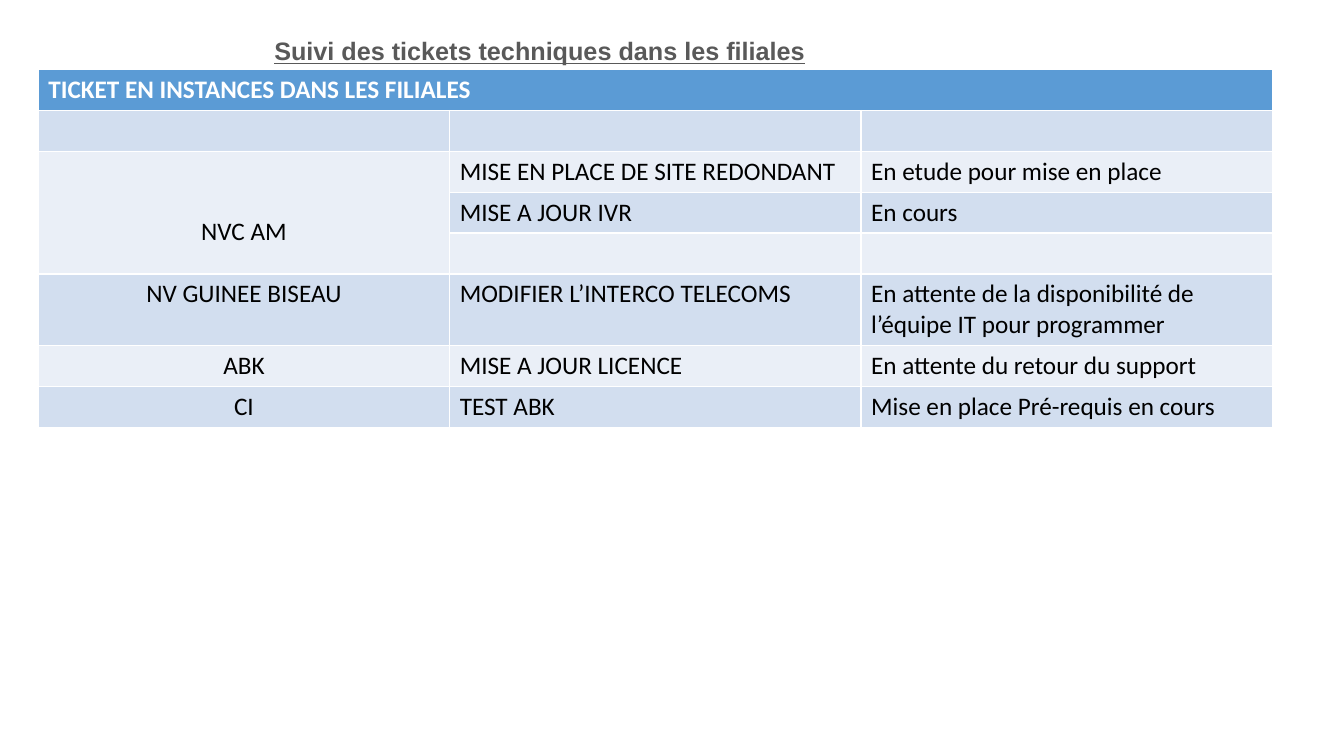
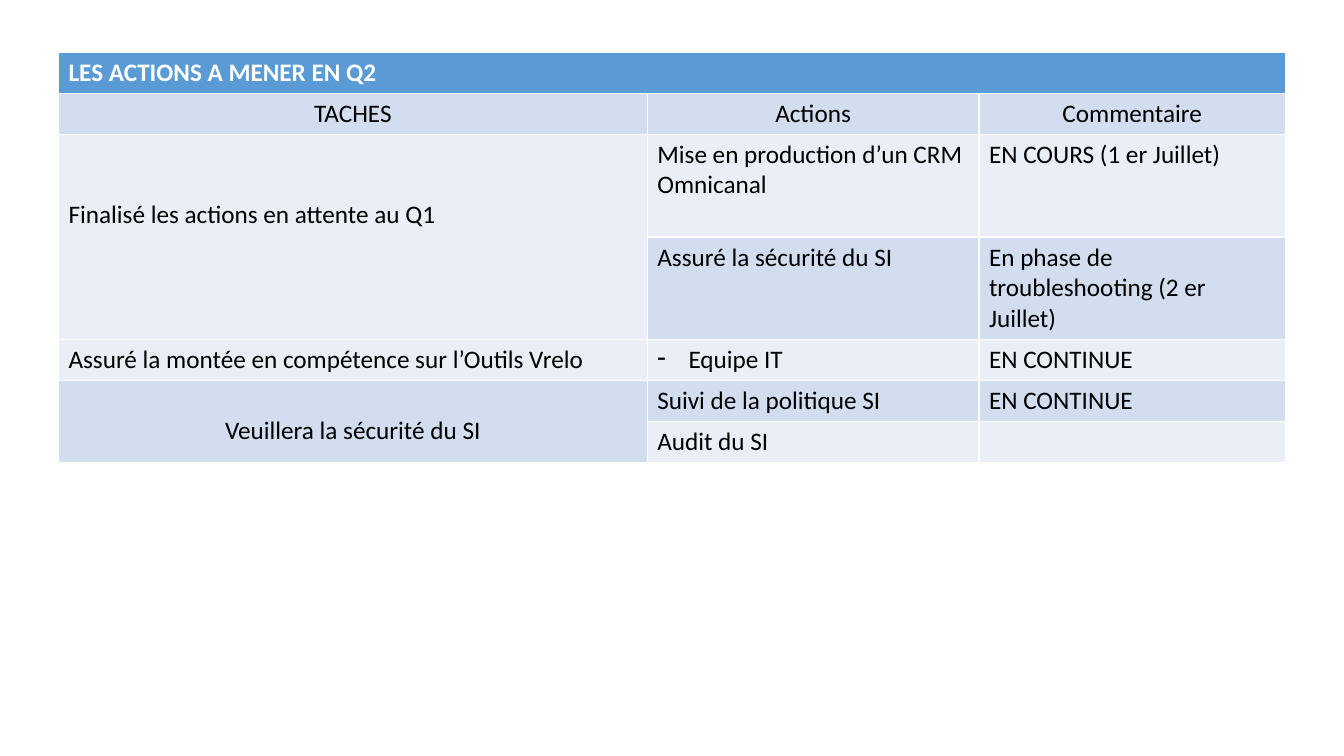
from dataclasses import dataclass

from lxml import etree
from pptx import Presentation
from pptx.dml.color import RGBColor
from pptx.enum.text import MSO_ANCHOR, PP_ALIGN
from pptx.oxml.ns import qn
from pptx.util import Inches, Pt

CENTER, JUSTIFY = PP_ALIGN.CENTER, PP_ALIGN.JUSTIFY
MIDDLE = MSO_ANCHOR.MIDDLE
TITLE_ONLY, BLANK = 5, 6


@dataclass(frozen=True)
class Theme:
    header: RGBColor = RGBColor(0x5B, 0x9B, 0xD5)
    bands: tuple = (RGBColor(0xEA, 0xEF, 0xF7), RGBColor(0xD2, 0xDE, 0xEF))
    white: RGBColor = RGBColor(0xFF, 0xFF, 0xFF)
    black: RGBColor = RGBColor(0, 0, 0)
    title: RGBColor = RGBColor(0x59, 0x59, 0x59)
    title_font: str = "Arial"
    body_font: str = "Calibri"
    size: Pt = Pt(18)
    line: float = 0.3
    cell_margin: float = 0.05


THEME = Theme()


def style_run(r, font, color, bold):
    r.font.name = font
    r.font.size = THEME.size
    r.font.color.rgb = color
    r.font.bold = bold


def add_banded_table(s, left, top, widths, heights, rows, row_spans, centered):
    """Draw a table whose first row is one heading.

    row_spans maps a first-column row to (rows spanned, lines the text is lowered).
    centered holds the (row, column) pairs of centred cells.
    """
    frame = s.shapes.add_table(len(rows), len(widths), Inches(left), Inches(top),
                               Inches(sum(widths)), Inches(sum(heights)))
    table = frame.table
    for column, width in zip(table.columns, widths):
        column.width = Inches(width)
    for row, height in zip(table.rows, heights):
        row.height = Inches(height)

    for i, texts in enumerate(rows):
        is_header = i == 0
        for j, text in enumerate(texts):
            cell = table.cell(i, j)
            cell.fill.solid()
            cell.fill.fore_color.rgb = THEME.header if is_header else THEME.bands[i % 2]
            if not text:
                continue
            p = cell.text_frame.paragraphs[0]
            if text.startswith("- "):
                text = text[2:]
                pPr = p._p.get_or_add_pPr()
                pPr.set("marL", str(Inches(0.31)))
                pPr.set("indent", str(-Inches(0.31)))
                etree.SubElement(pPr, qn("a:buChar")).set("char", "-")
            p.text = text
            if (i, j) in centered:
                p.alignment = CENTER
            style_run(p.runs[0], THEME.body_font,
                      THEME.white if is_header else THEME.black, is_header)

    table.cell(0, 0).merge(table.cell(0, len(widths) - 1))
    for i, (count, lines) in row_spans.items():
        cell = table.cell(i, 0)
        cell.merge(table.cell(i + count - 1, 0))
        cell.margin_top = Inches(THEME.cell_margin + lines * THEME.line)


prs = Presentation()
prs.slide_width, prs.slide_height = Inches(13.33), Inches(7.5)

# Tickets in the subsidiaries
s = prs.slides.add_slide(prs.slide_layouts[TITLE_ONLY])
title = s.shapes.title
title.left, title.top = Inches(2.62), Inches(0.3)
title.width, title.height = Inches(5.52), Inches(0.4)
tf = title.text_frame
tf.text = "Suivi des tickets techniques dans les filiales"
tf.word_wrap = False
tf.vertical_anchor = MIDDLE
p = tf.paragraphs[0]
p.alignment = JUSTIFY
style_run(p.runs[0], THEME.title_font, THEME.title, True)
p.runs[0].font.underline = True

tickets = [
    ("TICKET EN INSTANCES DANS LES FILIALES", "", ""),
    ("", "", ""),
    ("NVC AM", "MISE EN PLACE DE SITE REDONDANT", "En etude pour mise en place"),
    ("", "MISE A JOUR IVR", "En cours"),
    ("", "", ""),
    ("NV GUINEE BISEAU", "MODIFIER L’INTERCO TELECOMS",
     "En attente de la disponibilité de l’équipe IT pour programmer"),
    ("ABK", "MISE A JOUR LICENCE", "En attente du retour du support"),
    ("CI", "TEST ABK", "Mise en place Pré-requis en cours"),
]
add_banded_table(s, 0.38, 0.69, [4.08] * 3, [0.4] * 5 + [0.7] + [0.4] * 2, tickets,
                 row_spans={2: (3, 2)},
                 centered={(i, 0) for i in (2, 5, 6, 7)})

# Actions for the second quarter
s = prs.slides.add_slide(prs.slide_layouts[BLANK])
actions = [
    ("LES ACTIONS A MENER EN Q2", "", ""),
    ("TACHES", "Actions", "Commentaire"),
    ("Finalisé les actions en attente au Q1", "Mise en production d’un CRM Omnicanal",
     "EN COURS (1 er Juillet)"),
    ("", "Assuré la sécurité du SI", "En phase de troubleshooting (2 er Juillet)"),
    ("Assuré la montée en compétence sur l’Outils Vrelo", "- Equipe IT", "EN CONTINUE"),
    ("Veuillera la sécurité du SI", "Suivi de la politique SI", "EN CONTINUE"),
    ("", "Audit du SI", ""),
]
add_banded_table(s, 0.58, 0.52, [5.84, 3.29, 3.04], [0.4] * 2 + [1.02] * 2 + [0.4] * 3,
                 actions,
                 row_spans={2: (2, 2), 5: (2, 1)},
                 centered={(1, 0), (1, 1), (1, 2), (5, 0)})

prs.save("out.pptx")
